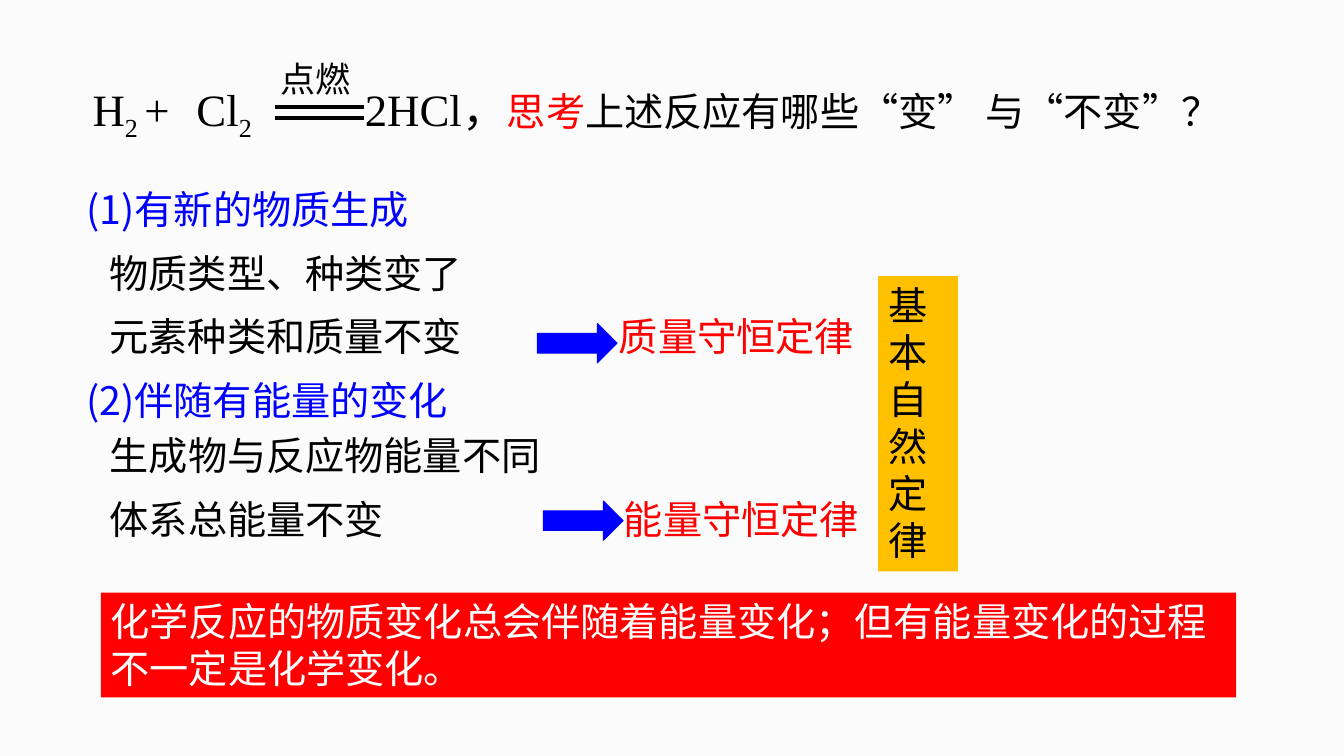
from dataclasses import dataclass

from lxml.etree import SubElement
from pptx import Presentation
from pptx.dml.color import RGBColor
from pptx.enum.shapes import MSO_CONNECTOR, MSO_SHAPE
from pptx.enum.text import MSO_ANCHOR, PP_ALIGN
from pptx.oxml.ns import qn
from pptx.util import Inches, Pt

BLACK = RGBColor(0, 0, 0)
WHITE = RGBColor(255, 255, 255)
RED = RGBColor(255, 0, 0)
BLUE = RGBColor(0, 0, 255)
GOLD = RGBColor(255, 192, 0)
PAPER = RGBColor(251, 251, 251)
SANS = "Noto Sans CJK SC"
SERIF = "Times New Roman"


@dataclass
class Words:
    text: str
    color: RGBColor = BLACK
    size: float = 28
    font: str = SANS
    base: int = 0


@dataclass
class Label:
    left: float
    top: float
    width: float
    words: Words
    height: float = 0.57


@dataclass
class Panel:
    left: float
    top: float
    width: float
    height: float
    fill: RGBColor
    words: Words


def style(run, words: Words) -> None:
    font = run.font
    font.size = Pt(words.size)
    font.color.rgb = words.color
    font.name = words.font
    props = run._r.get_or_add_rPr()
    SubElement(props, qn("a:ea")).set("typeface", SANS)
    if words.base:
        props.set("baseline", str(words.base * 1000))


def write(shape, line: list[Words]) -> None:
    frame = shape.text_frame
    frame.word_wrap = True
    frame.vertical_anchor = MSO_ANCHOR.TOP
    para = frame.paragraphs[0]
    para.alignment = PP_ALIGN.LEFT
    for words in line:
        run = para.add_run()
        run.text = words.text
        style(run, words)


def add_box(slide, left: float, top: float, width: float, height: float):
    return slide.shapes.add_textbox(
        Inches(left), Inches(top), Inches(width), Inches(height))


def add_label(slide, label: Label) -> None:
    box = add_box(slide, label.left, label.top, label.width, label.height)
    write(box, [label.words])


def add_solid(slide, kind, left: float, top: float, width: float,
              height: float, fill: RGBColor):
    shape = slide.shapes.add_shape(
        kind, Inches(left), Inches(top), Inches(width), Inches(height))
    shape.shadow.inherit = False
    shape.fill.solid()
    shape.fill.fore_color.rgb = fill
    shape.line.fill.background()
    return shape


def add_arrow(slide, left: float, top: float) -> None:
    arrow = add_solid(slide, MSO_SHAPE.RIGHT_ARROW, left, top, 0.79, 0.39, BLUE)
    arrow.line.color.rgb = BLUE
    arrow.line.width = Pt(0.75)


def add_panel(slide, panel: Panel) -> None:
    shape = add_solid(slide, MSO_SHAPE.RECTANGLE, panel.left, panel.top,
                      panel.width, panel.height, panel.fill)
    write(shape, [panel.words])


def add_rule(slide, left: float, right: float, top: float) -> None:
    rule = slide.shapes.add_connector(
        MSO_CONNECTOR.STRAIGHT, Inches(left), Inches(top),
        Inches(right), Inches(top))
    rule.line.color.rgb = BLACK
    rule.line.width = Pt(2.5)
    SubElement(rule._element.spPr, qn("a:effectLst"))


def add_tabs(para, stops: list[float]) -> None:
    tabs = SubElement(para._p.get_or_add_pPr(), qn("a:tabLst"))
    for stop in stops:
        tab = SubElement(tabs, qn("a:tab"))
        tab.set("pos", str(Inches(stop)))
        tab.set("algn", "l")


def term(text: str, base: int = 0) -> Words:
    return Words(text, size=32, font=SERIF, base=base)


TITLE = [
    term("H"), term("2 ", -25), term("+\tCl"),
    term("2", -25), term("\t2HCl，"),
    Words("思考", RED, font=SERIF),
    Words("上述反应有哪些“变” 与“不变”？", font=SERIF),
]

LABELS = [
    Label(2.68, 0.52, 1.01, Words("点燃", size=25, font="Arial"), 0.52),
    Label(0.76, 1.79, 4.09, Words("(1)有新的物质生成", BLUE)),
    Label(0.99, 2.42, 4.73, Words("物质类型、种类变了")),
    Label(0.99, 3.05, 4.73, Words("元素种类和质量不变")),
    Label(0.76, 3.68, 4.57, Words("(2)伴随有能量的变化", BLUE)),
    Label(0.99, 4.23, 5.35, Words("生成物与反应物能量不同")),
    Label(0.99, 4.86, 2.95, Words("体系总能量不变")),
    Label(6.04, 3.05, 3.01, Words("质量守恒定律", RED)),
    Label(6.09, 4.86, 3.01, Words("能量守恒定律", RED)),
]

PANELS = [
    Panel(8.71, 2.74, 0.79, 2.93, GOLD, Words("基本自然定律")),
    Panel(1, 5.88, 11.26, 1.04, RED, Words(
        "化学反应的物质变化总会伴随着能量变化；"
        "但有能量变化的过程不一定是化学变化。", WHITE)),
]


def main() -> None:
    deck = Presentation()
    deck.slide_width = Inches(13.33)
    deck.slide_height = Inches(7.5)
    slide = deck.slides.add_slide(deck.slide_layouts[6])
    slide.background.fill.solid()
    slide.background.fill.fore_color.rgb = PAPER

    # Equation and question
    title = add_box(slide, 0.82, 0.76, 11.43, 0.64)
    add_tabs(title.text_frame.paragraphs[0], [1.03, 2.7])
    write(title, TITLE)
    for top in (1.06, 1.17):
        add_rule(slide, 2.73, 3.61, top)

    # Points and laws
    for label in LABELS:
        add_label(slide, label)
    for left, top in ((5.33, 3.21), (5.39, 4.97)):
        add_arrow(slide, left, top)

    # Filled panels
    for panel in PANELS:
        add_panel(slide, panel)

    deck.save("out.pptx")


if __name__ == "__main__":
    main()
